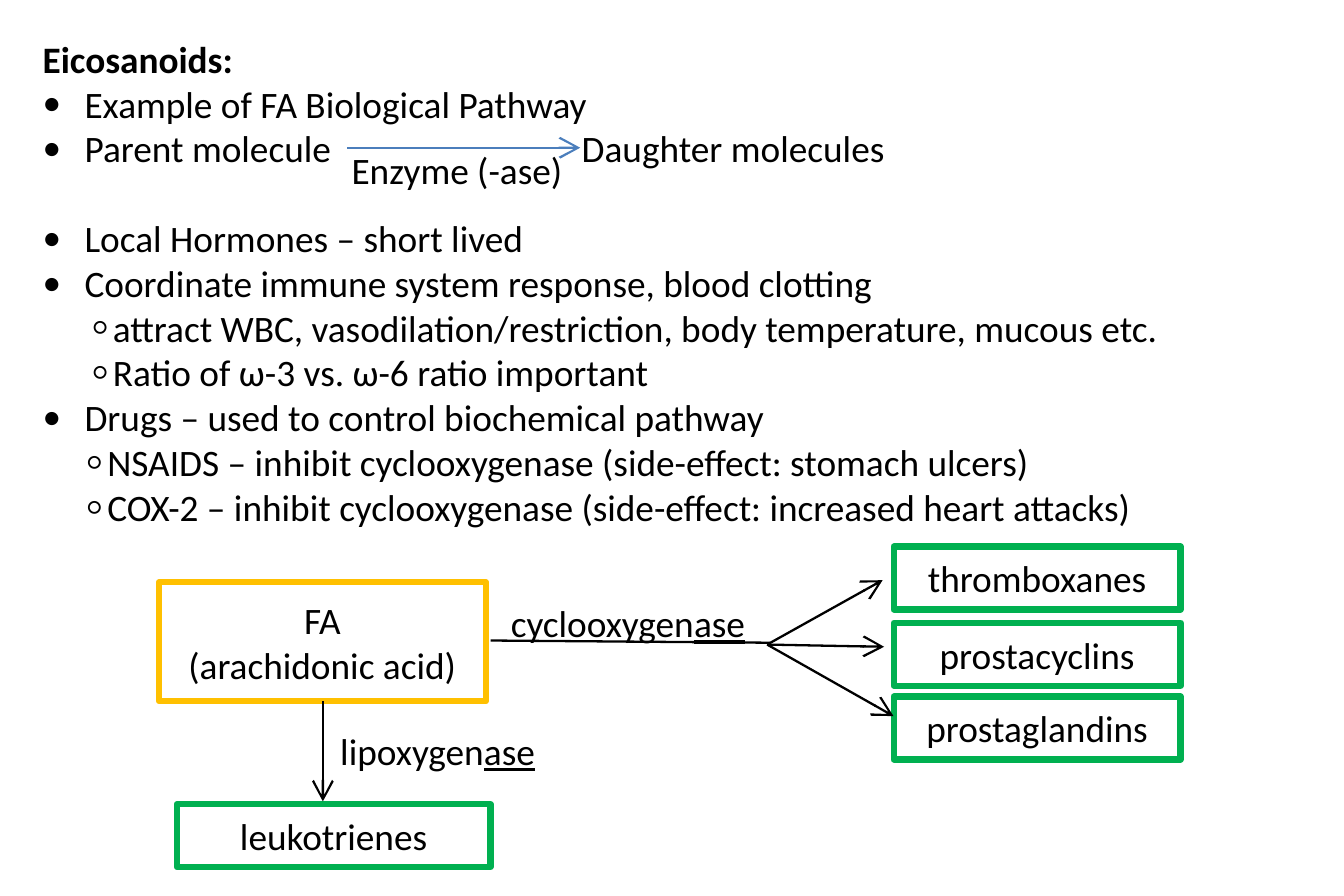
from lxml.etree import SubElement
from pptx import Presentation
from pptx.dml.color import RGBColor
from pptx.enum.shapes import MSO_CONNECTOR, MSO_SHAPE
from pptx.enum.text import MSO_ANCHOR, MSO_AUTO_SIZE, PP_ALIGN
from pptx.oxml.ns import qn
from pptx.util import Pt

BLACK = RGBColor(0x00, 0x00, 0x00)
BLUE = RGBColor(0x4B, 0x7E, 0xBC)
AMBER = RGBColor(0xFF, 0xC0, 0x00)
GREEN = RGBColor(0x00, 0xB0, 0x50)

LEFT = 13.7
# Bullet levels: character, size in percent, bullet offset, text offset
MAIN = ("•", 100, 0, 13.5)
IMMUNE = ("○", 67, 16.3, 22.6)
DRUG = ("○", 67, 14.5, 20.8)

POINTS = [
    (MAIN, "Example of FA Biological Pathway", 0),
    (MAIN, "Parent molecule", 0),
    (MAIN, "Local Hormones – short lived", 14.4),
    (MAIN, "Coordinate immune system response, blood clotting", 0),
    (IMMUNE, "attract WBC, vasodilation/restriction, body temperature, mucous etc.", 0),
    (IMMUNE, "Ratio of ω-3 vs. ω-6 ratio important", 0),
    (MAIN, "Drugs – used to control biochemical pathway", 0),
    (DRUG, "NSAIDS – inhibit cyclooxygenase (side-effect: stomach ulcers)", 0),
    (DRUG, "COX-2 – inhibit cyclooxygenase (side-effect: increased heart attacks)", 0),
]
LABELS = [
    (187, 40.4, 100, "Daughter molecules", ""),
    (113, 47.2, 70, "Enzyme (-ase)", ""),
    (164.2, 193, 80, "cyclooxygen", "ase"),
    (109.4, 234, 66, "lipoxygen", "ase"),
]
BOXES = [
    (51.1, 187.2, 105.1, 38.2, AMBER, ["FA", "(arachidonic acid)"]),
    (287.3, 175.7, 92.2, 20.2, GREEN, ["thromboxanes"]),
    (287.3, 200.2, 92.2, 20.2, GREEN, ["prostacyclins"]),
    (287.3, 223.9, 92.2, 20.2, GREEN, ["prostaglandins"]),
    (56.9, 258.5, 100.8, 20.2, GREEN, ["leukotrienes"]),
]
LINES = [
    (111.6, 47.5, 186.5, 47.5, BLUE, True),
    (157.7, 205.9, 247.7, 206.6, BLACK, False),
    (246.6, 207.2, 283.7, 186.5, BLACK, True),
    (246.6, 207.2, 284.2, 207.9, BLACK, True),
    (246.6, 207.2, 287.2, 230.2, BLACK, True),
    (103.8, 225.4, 103.8, 257.6, BLACK, True),
]


def set_all(obj, values):
    for name, value in values.items():
        setattr(obj, name, value)


def add_run(p, text, **values):
    r = p.add_run()
    r.text = text
    set_all(r.font, {"name": "Calibri", "size": Pt(12), "bold": False, **values})
    r.font.color.rgb = BLACK


def format_frame(tf, wrap, anchor=MSO_ANCHOR.TOP):
    set_all(tf, {"margin_left": 0, "margin_right": 0, "margin_top": 0,
                 "margin_bottom": 0, "word_wrap": wrap,
                 "auto_size": MSO_AUTO_SIZE.NONE, "vertical_anchor": anchor})


def add_title(s, text):
    title = s.shapes.title
    set_all(title, {"left": Pt(LEFT), "top": Pt(11.5),
                    "width": Pt(200), "height": Pt(14.6)})
    format_frame(title.text_frame, True)
    p = title.text_frame.paragraphs[0]
    p.alignment = PP_ALIGN.LEFT
    add_run(p, text, bold=True)


def set_bullet(p, char, percent, bullet_at, text_at):
    pPr = p._p.get_or_add_pPr()
    pPr.set("marL", str(Pt(text_at)))
    pPr.set("indent", str(Pt(bullet_at - text_at)))
    SubElement(pPr, qn("a:buSzPct"), val=str(percent * 1000))
    SubElement(pPr, qn("a:buFont"), typeface="Calibri")
    SubElement(pPr, qn("a:buChar"), char=char)


def add_points(s, points):
    tf = s.shapes.add_textbox(Pt(LEFT), Pt(26), Pt(400), Pt(146)).text_frame
    format_frame(tf, True)
    for i, (level, text, before) in enumerate(points):
        p = tf.add_paragraph() if i else tf.paragraphs[0]
        p.space_before = Pt(before)
        set_bullet(p, *level)
        add_run(p, text)


def add_label(s, x, y, width, text, underlined):
    tf = s.shapes.add_textbox(Pt(x), Pt(y), Pt(width), Pt(14.6)).text_frame
    format_frame(tf, False)
    add_run(tf.paragraphs[0], text)
    if underlined:
        add_run(tf.paragraphs[0], underlined, underline=True)


def add_box(s, x, y, width, height, color, lines):
    sp = s.shapes.add_shape(MSO_SHAPE.RECTANGLE, Pt(x), Pt(y), Pt(width), Pt(height))
    sp.shadow.inherit = False
    sp.fill.background()
    sp.line.color.rgb = color
    sp.line.width = Pt(2)
    tf = sp.text_frame
    format_frame(tf, True, MSO_ANCHOR.MIDDLE)
    for i, text in enumerate(lines):
        p = tf.add_paragraph() if i else tf.paragraphs[0]
        p.alignment = PP_ALIGN.CENTER
        add_run(p, text)


def add_line(s, x1, y1, x2, y2, color, arrow):
    line = s.shapes.add_connector(MSO_CONNECTOR.STRAIGHT, Pt(x1), Pt(y1), Pt(x2), Pt(y2))
    line.line.color.rgb = color
    line.line.width = Pt(0.75)
    if arrow:
        SubElement(line.line._get_or_add_ln(), qn("a:tailEnd"), type="arrow")
    SubElement(line._element.spPr, qn("a:effectLst"))


def main():
    prs = Presentation()
    set_all(prs, {"slide_width": Pt(432), "slide_height": Pt(288)})
    s = prs.slides.add_slide(prs.slide_layouts[5])
    add_title(s, "Eicosanoids:")
    add_points(s, POINTS)
    for add, items in ((add_box, BOXES), (add_line, LINES), (add_label, LABELS)):
        for item in items:
            add(s, *item)
    prs.save("out.pptx")


if __name__ == "__main__":
    main()
